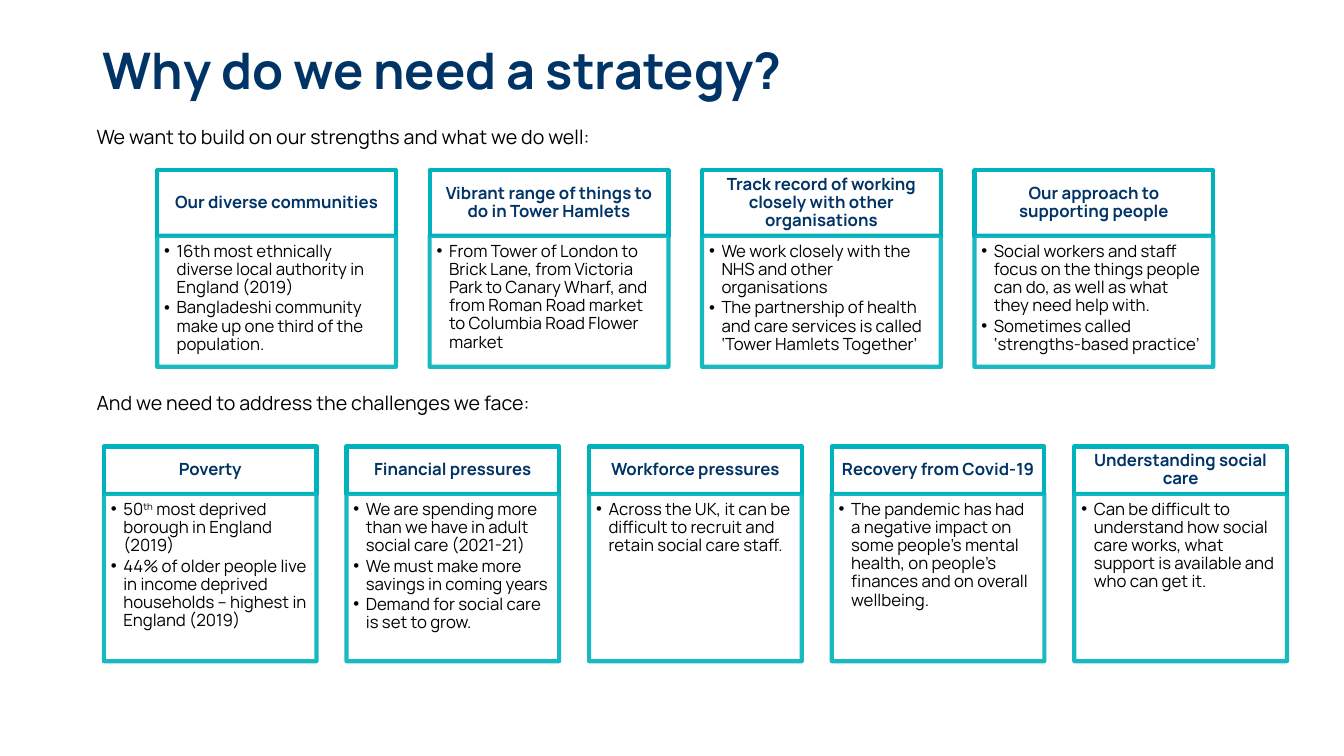
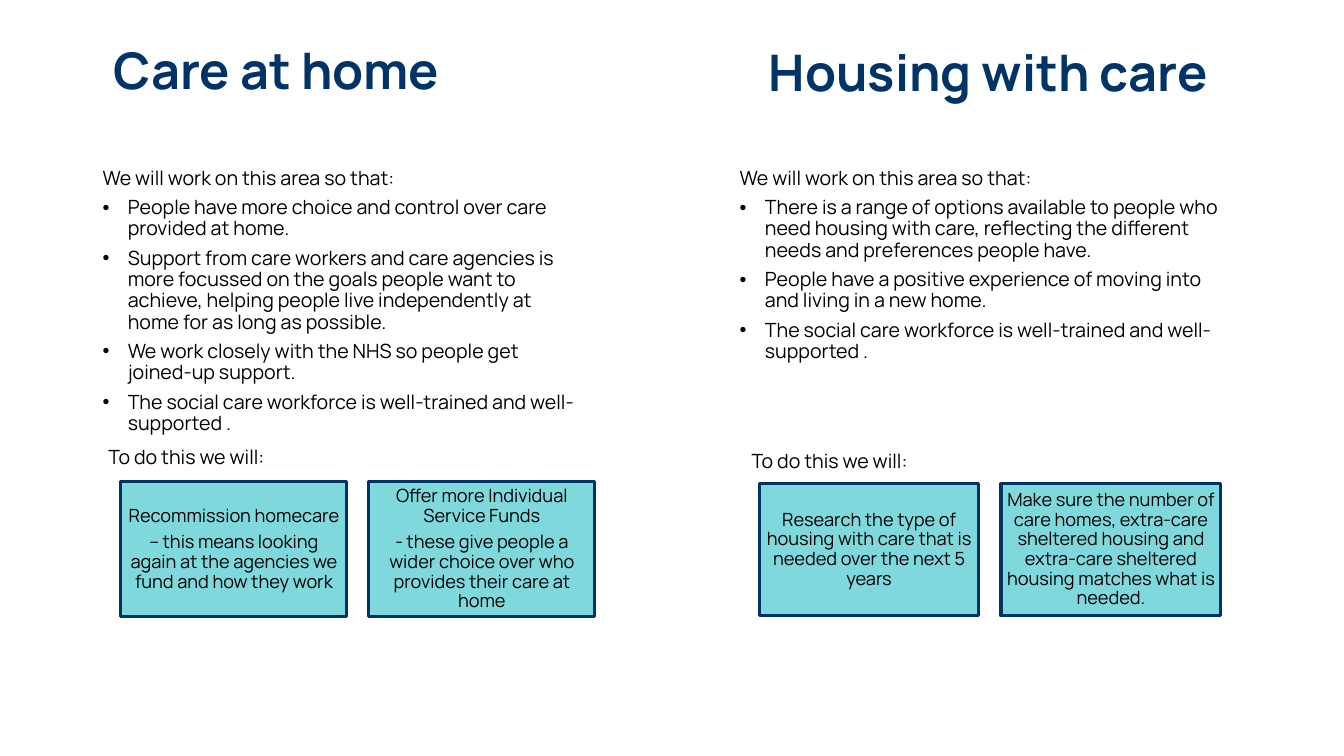
"""Builds two slides on an adult social care strategy."""
from lxml import etree
from pptx import Presentation
from pptx.dml import color
from pptx.enum import shapes, text
from pptx.oxml import ns
from pptx.util import Pt

FONT, NAVY, TEAL, BLACK, WHITE = "Manrope", "003366", "00B2BB", "000000", "FFFFFF"
LEFT, CENTER = text.PP_ALIGN.LEFT, text.PP_ALIGN.CENTER
TOP, MIDDLE = text.MSO_ANCHOR.TOP, text.MSO_ANCHOR.MIDDLE
PLAIN_INSETS = (7.2, 3.6, 7.2, 3.6)

STRATEGY_TITLE = ("Why do we need a strategy?", (66.2, 0, 769.7, 104.4))
STRATEGY_ROWS = [
    {
        "intro": "We want to build on our strengths and what we do well:",
        "intro_top": 87.8,
        "left": 112.3, "top": 121.7, "width": 170.6, "gap": 24,
        "head": 46.8, "body": 93.6,
        "cards": [
            ("Our diverse communities", [
                "16th most ethnically diverse local authority in England (2019)",
                "Bangladeshi community make up one third of the population."]),
            ("Vibrant range of things to do in Tower Hamlets", [
                "From Tower of London to Brick Lane, from Victoria Park to Canary Wharf, "
                "and from Roman Road market to Columbia Road Flower market"]),
            ("Track record of working closely with other organisations", [
                "We work closely with the NHS and other organisations",
                "The partnership of health and care services is called "
                "‘Tower Hamlets Together’"]),
            ("Our approach to supporting people", [
                "Social workers and staff focus on the things people can do, "
                "as well as what they need help with.",
                "Sometimes called ‘strengths-based practice’"]),
        ],
    },
    {
        "intro": "And we need to address the challenges we face:",
        "intro_top": 277.8,
        "left": 74.2, "top": 319, "width": 151.9, "gap": 21.4,
        "head": 33.8, "body": 119.5,
        "cards": [
            ("Poverty", [
                "50^th^ most deprived borough in England (2019)",
                "44% of older people live in income deprived households – "
                "highest in England (2019)"]),
            ("Financial pressures", [
                "We are spending more than we have in adult social care (2021-21)",
                "We must make more savings in coming years",
                "Demand for social care is set to grow."]),
            ("Workforce pressures", [
                "Across the UK, it can be difficult to recruit and retain social care staff."]),
            ("Recovery from Covid-19", [
                "The pandemic has had a negative impact on some people’s mental health, "
                "on people’s finances and on overall wellbeing."]),
            ("Understanding social care", [
                "Can be difficult to understand how social care works, "
                "what support is available and who can get it."]),
        ],
    },
]

AIM_INTRO = "We will work on this area so that:"
ACTION_INTRO = "To do this we will:"
WORKFORCE_AIM = "The social care workforce is well-trained and well-supported ."
CARE_AREAS = [
    {
        "title": ("Care at home", (74.2, 0, 393.8, 104.4)),
        "aims_left": 66.2,
        "aims": [
            "People have more choice and control over care provided at home.",
            "Support from care workers and care agencies is more focussed on the goals "
            "people want to achieve, helping people live independently at home for as "
            "long as possible.",
            "We work closely with the NHS so people get joined-up support.",
            WORKFORCE_AIM],
        "label": (58.3, 314.6),
        "left": 86.4, "top": 344.2, "width": 161.3, "gap": 15.8, "height": 96.5,
        "actions": [
            ["Recommission homecare",
             "– this means looking again at the agencies we fund and how they work"],
            ["Offer more Individual Service Funds",
             "- these give people a wider choice over who provides their care at home"]],
    },
    {
        "title": ("Housing with care", (542.2, 1.4, 393.8, 104.4)),
        "aims_left": 521.3,
        "aims": [
            "There is a range of options available to people who need housing with care, "
            "reflecting the different needs and preferences people have.",
            "People have a positive experience of moving into and living in a new home.",
            WORKFORCE_AIM],
        "label": (517.7, 316.8),
        "left": 542.2, "top": 345.6, "width": 157, "gap": 15.8, "height": 94.3,
        "actions": [
            ["Research the type of housing with care that is needed over the next 5 years"],
            ["Make sure the number of care homes, extra-care sheltered housing and "
             "extra-care sheltered housing matches what is needed."]],
    },
]


def rgb(value):
    """Turn a hex string into a colour."""
    return color.RGBColor.from_string(value)


def place(shape, frame):
    """Move a shape to left, top, width and height in points."""
    shape.left, shape.top, shape.width, shape.height = map(Pt, frame)


def add_bullet(para, indent):
    """Give a paragraph a hanging round bullet."""
    props = para._p.get_or_add_pPr()
    props.set("marL", str(Pt(indent)))
    props.set("indent", str(-Pt(indent)))
    etree.SubElement(props, ns.qn("a:buFont")).set("typeface", "Arial")
    etree.SubElement(props, ns.qn("a:buChar")).set("char", "•")


def write(shape, lines, size, ink=BLACK, bold=False, align=LEFT, anchor=TOP,
          insets=PLAIN_INSETS, spacing=0.9, before=0, after=0, indent=0, first_bullet=0):
    """Fill a shape with paragraphs; text between carets is superscript."""
    frame = shape.text_frame
    frame.word_wrap = True
    frame.auto_size = text.MSO_AUTO_SIZE.NONE
    frame.vertical_anchor = anchor
    (frame.margin_left, frame.margin_top,
     frame.margin_right, frame.margin_bottom) = map(Pt, insets)
    for index, line in enumerate(lines):
        para = frame.add_paragraph() if index else frame.paragraphs[0]
        if indent and index >= first_bullet:
            add_bullet(para, indent)
        para.alignment = align
        para.line_spacing = spacing
        para.space_before = Pt(before if index else 0)
        para.space_after = Pt(after)
        for part, words in enumerate(line.split("^")):
            span = para.add_run()
            span.text = words
            span.font.name, span.font.size, span.font.bold = FONT, Pt(size), bold
            span.font.color.rgb = rgb(ink)
            if part % 2:
                span.font._element.set("baseline", "30000")


def add_text(page, frame, lines, size, **style):
    """Add a text box."""
    write(page.shapes.add_textbox(*map(Pt, frame)), lines, size, **style)


def add_box(page, frame, fill, line, weight, opacities=()):
    """Add a rectangle; opacities are percentages for its fill, then its line."""
    box = page.shapes.add_shape(shapes.MSO_SHAPE.RECTANGLE, *map(Pt, frame))
    box.shadow.inherit = False
    box.fill.solid()
    box.fill.fore_color.rgb = rgb(fill)
    box.line.color.rgb = rgb(line)
    box.line.width = Pt(weight)
    inks = box._element.spPr.iter(ns.qn("a:srgbClr"))
    for ink, opacity in zip(list(inks), opacities):
        etree.SubElement(ink, ns.qn("a:alpha")).set("val", str(opacity * 1000))
    return box


def write_title(shape, words):
    """Write a heading in the shared title style."""
    write(shape, [words], 36, NAVY, True, anchor=MIDDLE)


def add_page(deck, title):
    """Add a title-only slide with its title placed and styled."""
    page = deck.slides.add_slide(deck.slide_layouts[5])
    words, frame = title
    place(page.shapes.title, frame)
    write_title(page.shapes.title, words)
    return page


def add_card_row(page, row):
    """Add an introduction and a row of headed cards."""
    add_text(page, (61.9, row["intro_top"], 832.3, 30), [row["intro"]], 14)
    for index, (heading, points) in enumerate(row["cards"]):
        left = row["left"] + index * (row["width"] + row["gap"])
        head = add_box(page, (left, row["top"], row["width"], row["head"]), WHITE, TEAL, 3)
        write(head, [heading], 12, NAVY, True, CENTER, MIDDLE, (6.5, 3.6, 6.5, 3.6))
        body = add_box(page, (left, row["top"] + row["head"], row["width"], row["body"]),
                       WHITE, TEAL, 3, (90, 90))
        write(body, points, 12, insets=(5, 5, 6.5, 7.2), after=1.6, indent=8.9)


def add_care_area(page, area):
    """Add the aims and action boxes of one care area."""
    add_text(page, (area["aims_left"], 116.6, 359.3, 190), [AIM_INTRO] + area["aims"], 14,
             before=6, indent=18, first_bullet=1)
    add_text(page, (*area["label"], 149.8, 24.5), [ACTION_INTRO], 14,
             align=CENTER, spacing=1.0)
    for index, lines in enumerate(area["actions"]):
        left = area["left"] + index * (area["width"] + area["gap"])
        box = add_box(page, (left, area["top"], area["width"], area["height"]),
                      TEAL, NAVY, 2.25, (50,))
        write(box, lines, 13, align=CENTER, anchor=MIDDLE, insets=(3.6,) * 4, after=4.6)


def main():
    """Build and save the deck."""
    deck = Presentation()
    deck.slide_width, deck.slide_height = Pt(960), Pt(540)

    page = add_page(deck, STRATEGY_TITLE)
    for row in STRATEGY_ROWS:
        add_card_row(page, row)

    home, housing = CARE_AREAS
    page = add_page(deck, home["title"])
    words, frame = housing["title"]
    write_title(page.shapes.add_textbox(*map(Pt, frame)), words)
    for area in CARE_AREAS:
        add_care_area(page, area)

    deck.save("out.pptx")


if __name__ == "__main__":
    main()
